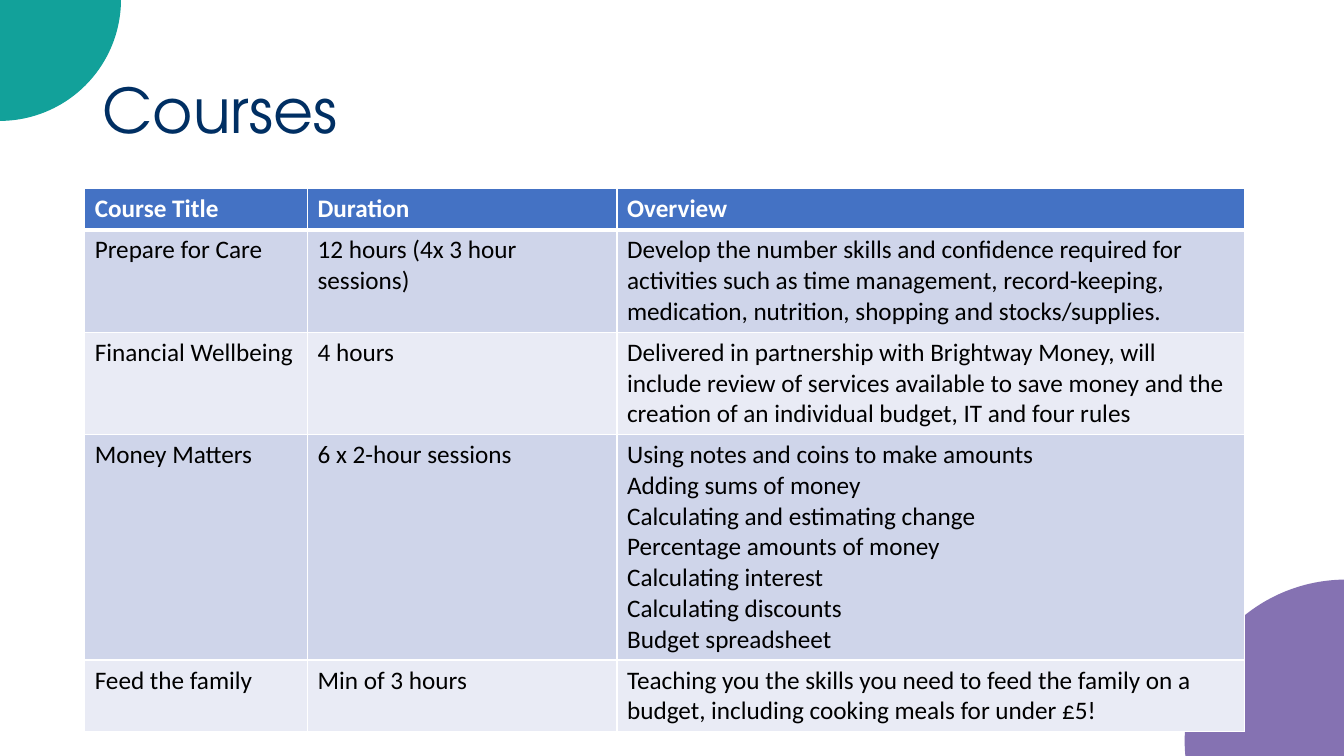
from dataclasses import dataclass

from lxml.etree import SubElement
from pptx import Presentation
from pptx.dml.color import RGBColor
from pptx.enum.shapes import MSO_SHAPE
from pptx.enum.text import MSO_ANCHOR, PP_ALIGN
from pptx.oxml.ns import qn
from pptx.util import Inches, Pt


@dataclass(frozen=True)
class Theme:
    teal: str = "12A19A"
    purple: str = "8572B2"
    navy: str = "002F63"
    head: str = "4472C4"
    bands: tuple = ("CFD5EA", "E9EBF5")
    white: str = "FFFFFF"
    black: str = "000000"
    title_font: str = "TeX Gyre Adventor"
    body_font: str = "Calibri"
    title_size: int = 44
    body_size: int = 18


THEME = Theme()
WIDTHS = (2.21, 3.07, 6.22)
ROW = 0.41
COURSES = (
    ("Course Title", "Duration", "Overview"),
    ("Prepare for Care", "12 hours (4x 3 hour sessions)",
     "Develop the number skills and confidence required for activities such as "
     "time management, record-keeping, medication, nutrition, shopping and "
     "stocks/supplies."),
    ("Financial Wellbeing", "4 hours",
     "Delivered in partnership with Brightway Money, will include review of "
     "services available to save money and the creation of an individual "
     "budget, IT and four rules"),
    ("Money Matters", "6 x 2-hour sessions",
     "Using notes and coins to make amounts\nAdding sums of money\n"
     "Calculating and estimating change\nPercentage amounts of money\n"
     "Calculating interest\nCalculating discounts\nBudget spreadsheet"),
    ("Feed the family", "Min of 3 hours",
     "Teaching you the skills you need to feed the family on a budget, "
     "including cooking meals for under £5!"),
)


def write(frame, text, font=THEME.body_font, size=THEME.body_size,
          color=THEME.black, bold=False, spacing=None):
    """Put text in a frame, one paragraph per line."""
    frame.text = text
    for para in frame.paragraphs:
        para.alignment = PP_ALIGN.LEFT
        para.line_spacing = spacing
        for run in para.runs:
            run.font.name = font
            run.font.size = Pt(size)
            run.font.bold = bold
            run.font.color.rgb = RGBColor.from_string(color)


def add_disc(slide, left, top, size, color):
    disc = slide.shapes.add_shape(
        MSO_SHAPE.OVAL, Inches(left), Inches(top), Inches(size), Inches(size))
    disc.shadow.inherit = False
    disc.fill.solid()
    disc.fill.fore_color.rgb = RGBColor.from_string(color)
    disc.line.fill.background()


def add_title(slide, text):
    title = slide.shapes.title
    title.left, title.top = Inches(0.92), Inches(0.4)
    title.width, title.height = Inches(9.09), Inches(1.45)
    title.text_frame.vertical_anchor = MSO_ANCHOR.MIDDLE
    write(title.text_frame, text, font=THEME.title_font,
          size=THEME.title_size, color=THEME.navy, spacing=0.9)


def set_edges(cell, top, base):
    """Draw white cell borders; top and base are widths in points."""
    props = cell._tc.get_or_add_tcPr()
    for side, width in (("L", 1), ("R", 1), ("T", top), ("B", base)):
        line = SubElement(props, qn(f"a:ln{side}"), w=str(Pt(width)))
        fill = SubElement(line, qn("a:solidFill"))
        SubElement(fill, qn("a:srgbClr"), val=THEME.white)


def add_grid(slide, rows):
    frame = slide.shapes.add_table(
        len(rows), len(WIDTHS), Inches(0.84), Inches(1.87),
        Inches(sum(WIDTHS)), Inches(ROW * len(rows)))
    table = frame.table
    for col, width in zip(table.columns, WIDTHS):
        col.width = Inches(width)
    for i, row in enumerate(rows):
        table.rows[i].height = Inches(ROW)
        head = i == 0
        shade = THEME.head if head else THEME.bands[(i - 1) % 2]
        for j, text in enumerate(row):
            cell = table.cell(i, j)
            set_edges(cell, top=3 if i == 1 else 1, base=3 if head else 1)
            cell.fill.solid()
            cell.fill.fore_color.rgb = RGBColor.from_string(shade)
            write(cell.text_frame, text, bold=head,
                  color=THEME.white if head else THEME.black)
    # Rows grow to fit their text
    frame.height = Inches(5.31)


def main():
    deck = Presentation()
    deck.slide_width, deck.slide_height = Inches(13.33), Inches(7.5)
    slide = deck.slides.add_slide(deck.slide_layouts[5])

    # Corner discs
    add_disc(slide, 11.75, 5.75, 3.2, THEME.purple)
    add_disc(slide, -1.21, -1.21, 2.41, THEME.teal)

    # Heading and course list
    add_title(slide, "Courses")
    add_grid(slide, COURSES)

    deck.save("out.pptx")


if __name__ == "__main__":
    main()
